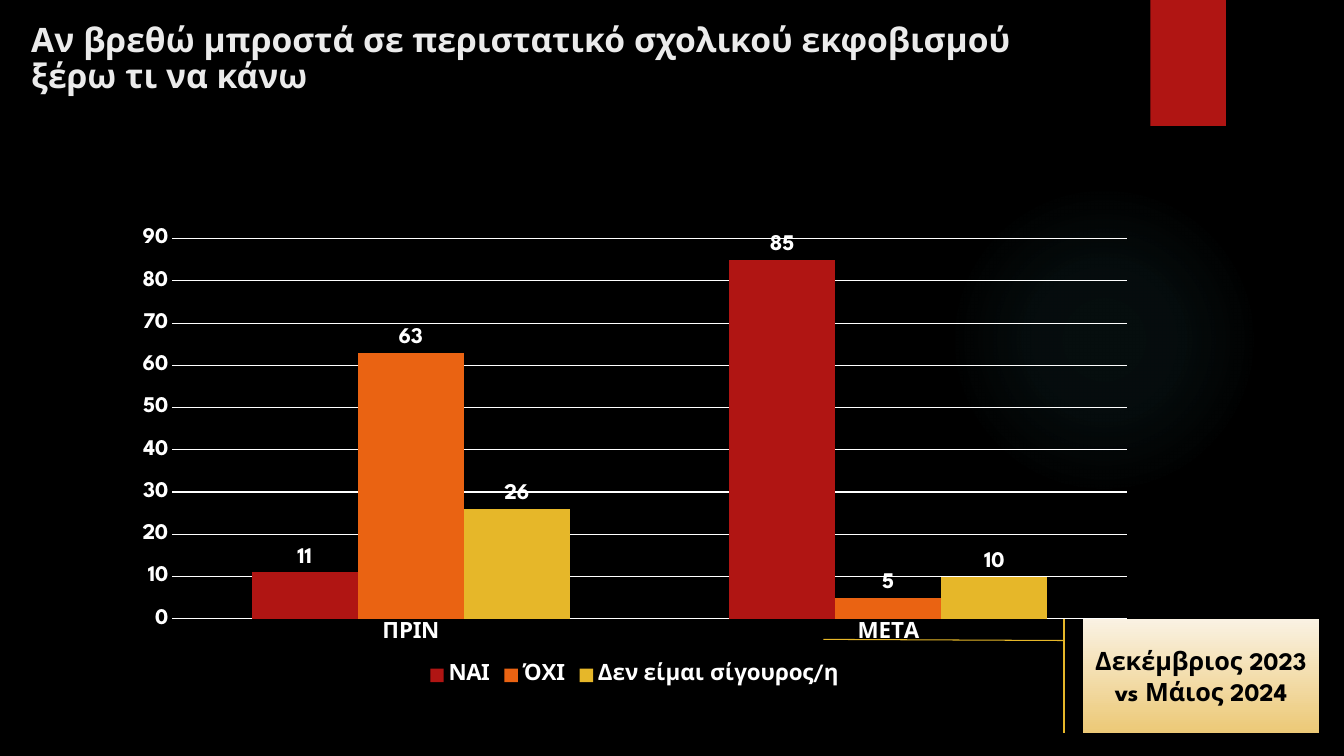
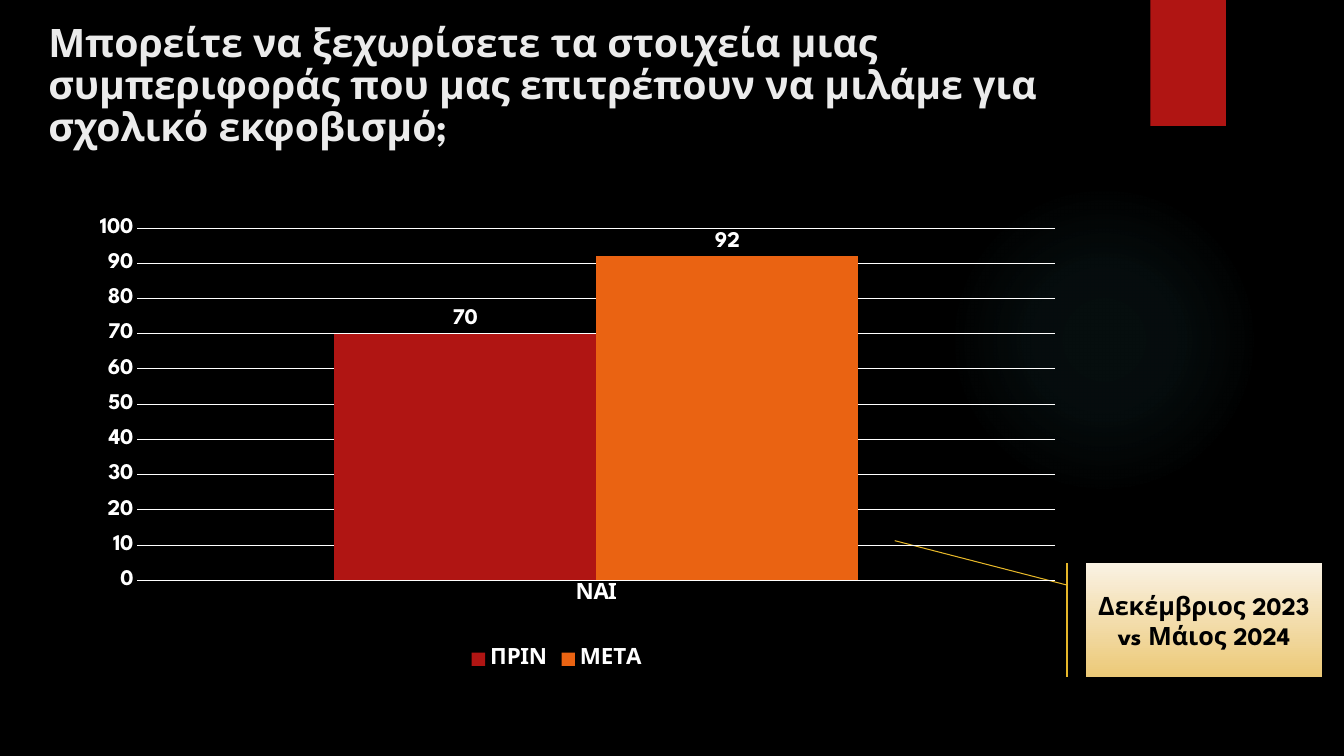
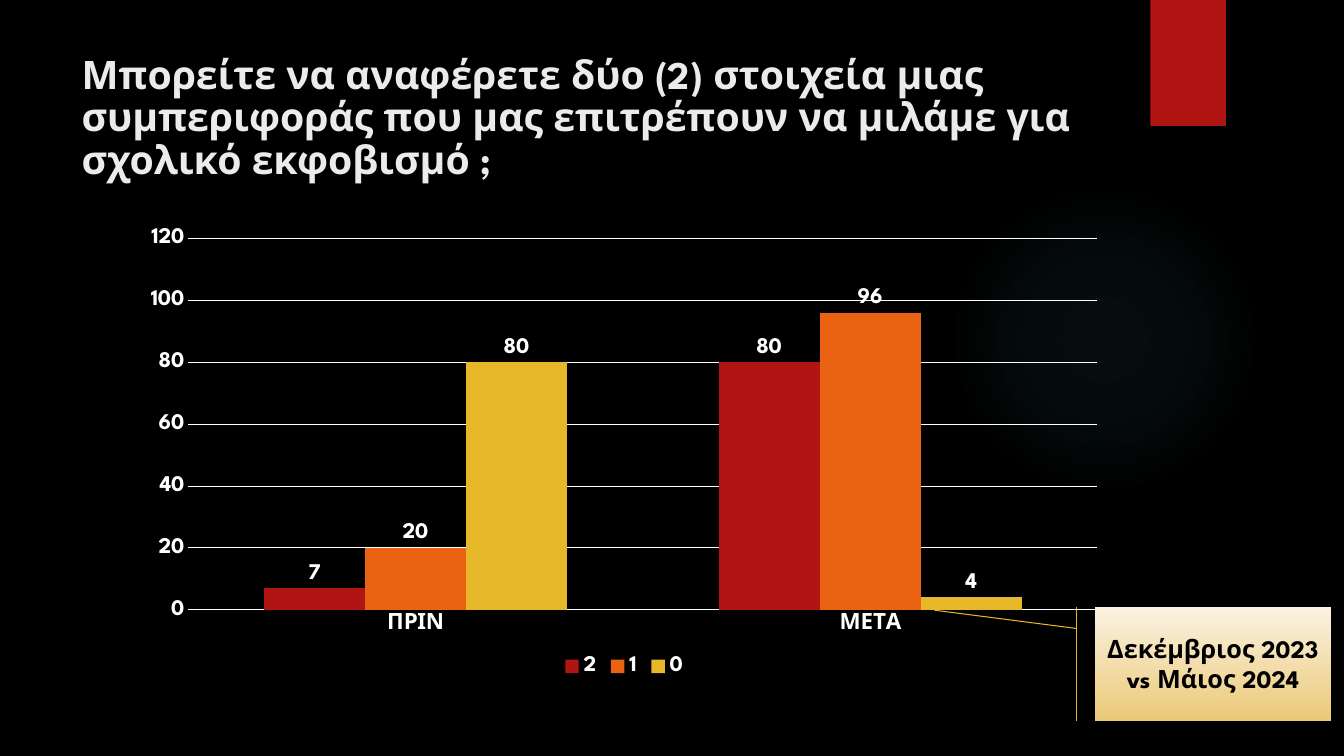
import dataclasses

import pptx
import pptx.chart.data
import pptx.dml.color
import pptx.enum.chart
import pptx.enum.shapes
import pptx.enum.text
import pptx.oxml
import pptx.oxml.ns
import pptx.util

Inches = pptx.util.Inches
Pt = pptx.util.Pt


@dataclasses.dataclass(frozen=True)
class Theme:
    font: str = "League Spartan"
    background: str = "000000"
    title: str = "EBEBEB"
    chart_text: str = "FFFFFF"
    callout_text: str = "000000"
    callout_top: str = "FAF2E3"
    callout_bottom: str = "ECC977"
    glow: str = "50B9C1"
    red: str = "B01513"
    orange: str = "EA6312"
    gold: str = "E6B729"
    chart_size: int = 16
    callout_size: int = 18
    title_size: int = 28
    long_title_size: int = 24
    hairline: float = 0.75

    @property
    def series(self):
        return self.red, self.orange, self.gold


THEME = Theme()
TITLE_SIZE = (10.29, 1.53)
CALLOUT_SIZE = (2.34, 1.13)
PERIOD = "Δεκέμβριος 2023 vs Μάιος 2024"


def rgb(value):
    return pptx.dml.color.RGBColor.from_string(value)


def place(box):
    return [Inches(length) for length in box]


def format_font(font, size, color):
    font.name = THEME.font
    font.size = Pt(size)
    font.bold = True
    font.color.rgb = rgb(color)


def write_text(shape, text, *, size, color, align, anchor, spacing=1.0):
    frame = shape.text_frame
    frame.word_wrap = True
    frame.auto_size = pptx.enum.text.MSO_AUTO_SIZE.NONE
    frame.vertical_anchor = anchor
    para = frame.paragraphs[0]
    para.alignment = align
    para.line_spacing = spacing
    span = para.add_run()
    span.text = text
    format_font(span.font, size, color)


def add_glow(page, box):
    glow = page.shapes.add_shape(pptx.enum.shapes.MSO_SHAPE.OVAL, *place(box))
    glow.shadow.inherit = False
    glow.line.fill.background()
    stops = "".join(
        f'<a:gs pos="{position * 1000}"><a:srgbClr val="{THEME.glow}">'
        f'<a:alpha val="{alpha * 1000}"/></a:srgbClr></a:gs>'
        for position, alpha in ((0, 7), (36, 6), (69, 0))
    )
    gradient = pptx.oxml.parse_xml(
        f'<a:gradFill {pptx.oxml.ns.nsdecls("a")}><a:gsLst>{stops}</a:gsLst>'
        '<a:path path="circle"><a:fillToRect l="50000" t="50000" r="50000" b="50000"/>'
        "</a:path></a:gradFill>"
    )
    properties = glow.element.spPr
    properties.find(pptx.oxml.ns.qn("a:prstGeom")).addnext(gradient)
    return glow


def add_ribbon(page, box):
    ribbon = page.shapes.add_shape(pptx.enum.shapes.MSO_SHAPE.RECTANGLE, *place(box))
    ribbon.shadow.inherit = False
    ribbon.fill.solid()
    ribbon.fill.fore_color.rgb = rgb(THEME.red)
    ribbon.line.fill.background()
    return ribbon


def decorate_layout(layout, page):
    background = layout.background.fill
    background.solid()
    background.fore_color.rgb = rgb(THEME.background)
    decorations = (
        add_glow(page, (9.41, 1.83, 3.08, 3.08)),
        add_ribbon(page, (11.41, 0, 0.75, 1.25)),
    )
    tree = layout.element.cSld.spTree
    for index, shape in enumerate(decorations, 2):
        tree.insert(index, shape.element)


def add_title(page, corner, text, size):
    title = page.shapes.title
    title.left, title.top, title.width, title.height = place(corner + TITLE_SIZE)
    write_text(
        title,
        text,
        size=size,
        color=THEME.title,
        align=pptx.enum.text.PP_ALIGN.LEFT,
        anchor=pptx.enum.text.MSO_ANCHOR.TOP,
        spacing=0.9,
    )


def add_callout(page, corner, pointer):
    callout = page.shapes.add_shape(
        pptx.enum.shapes.MSO_SHAPE.LINE_CALLOUT_1_ACCENT_BAR, *place(corner + CALLOUT_SIZE)
    )
    callout.shadow.inherit = False
    for index, value in enumerate((0.19, -0.08) + pointer):
        callout.adjustments[index] = value
    callout.fill.gradient()
    callout.fill.gradient_angle = 270
    colors = (THEME.callout_top, THEME.callout_bottom)
    for position, (stop, color) in enumerate(zip(callout.fill.gradient_stops, colors)):
        stop.position = position
        stop.color.rgb = rgb(color)
    callout.line.color.rgb = rgb(THEME.gold)
    callout.line.width = Pt(THEME.hairline)
    write_text(
        callout,
        PERIOD,
        size=THEME.callout_size,
        color=THEME.callout_text,
        align=pptx.enum.text.PP_ALIGN.CENTER,
        anchor=pptx.enum.text.MSO_ANCHOR.MIDDLE,
    )


def set_plot_area(chart, area):
    plot_area = chart.element.chart.plotArea
    for old in plot_area.findall(pptx.oxml.ns.qn("c:layout")):
        plot_area.remove(old)
    lengths = "".join(f'<c:{key} val="{value}"/>' for key, value in zip("xywh", area))
    plot_area.insert(
        0,
        pptx.oxml.parse_xml(
            f'<c:layout {pptx.oxml.ns.nsdecls("c")}><c:manualLayout>'
            '<c:layoutTarget val="inner"/><c:xMode val="edge"/><c:yMode val="edge"/>'
            f"{lengths}</c:manualLayout></c:layout>"
        ),
    )


def add_column_chart(page, box, categories, series, area=None):
    data = pptx.chart.data.CategoryChartData()
    data.categories = categories
    for name, values in series.items():
        data.add_series(name, values)
    kind = pptx.enum.chart.XL_CHART_TYPE.COLUMN_CLUSTERED
    chart = page.shapes.add_chart(kind, *place(box), data).chart
    chart.has_title = False
    format_font(chart.font, THEME.chart_size, THEME.chart_text)

    chart.has_legend = True
    chart.legend.position = pptx.enum.chart.XL_LEGEND_POSITION.BOTTOM
    chart.legend.include_in_layout = False

    for axis in (chart.category_axis, chart.value_axis):
        axis.major_tick_mark = pptx.enum.chart.XL_TICK_MARK.NONE
        axis.minor_tick_mark = pptx.enum.chart.XL_TICK_MARK.NONE
        axis.format.line.fill.background()
    grid = chart.value_axis.major_gridlines.format.line
    grid.color.rgb = rgb(THEME.chart_text)
    grid.width = Pt(THEME.hairline)

    plot = chart.plots[0]
    plot.gap_width = 150
    plot.overlap = 0
    plot.vary_by_categories = False
    plot.has_data_labels = True
    labels = plot.data_labels
    labels.show_value = True
    labels.position = pptx.enum.chart.XL_LABEL_POSITION.OUTSIDE_END
    format_font(labels.font, THEME.chart_size, THEME.chart_text)
    for column, color in zip(plot.series, THEME.series):
        column.format.fill.solid()
        column.format.fill.fore_color.rgb = rgb(color)
    if area:
        set_plot_area(chart, area)


def build_knowledge_page(page):
    add_title(
        page,
        (0.21, 0.18),
        "Αν βρεθώ μπροστά σε περιστατικό σχολικού εκφοβισμού ξέρω τι να κάνω",
        THEME.long_title_size,
    )
    add_column_chart(
        page,
        (1.21, 2.17, 10.17, 4.68),
        ("ΠΡΙΝ", "ΜΕΤΑ"),
        {"ΝΑΙ": (11, 85), "ΌΧΙ": (63, 5), "Δεν είμαι σίγουρος/η": (26, 10)},
    )
    add_callout(page, (10.74, 6.14), (0.18, -1.1))


def build_recognition_page(page):
    add_title(
        page,
        (0.38, 0.18),
        "Μπορείτε να ξεχωρίσετε τα στοιχεία μιας συμπεριφοράς που μας επιτρέπουν "
        "να μιλάμε για σχολικό εκφοβισμό;",
        THEME.title_size,
    )
    add_callout(page, (10.77, 5.59), (-0.2, -0.81))
    add_column_chart(
        page,
        (0.57, 2.03, 9.9, 4.66),
        ("ΝΑΙ",),
        {"ΠΡΙΝ": (70,), "ΜΕΤΑ": (92,)},
        area=(0.08, 0.05, 0.92, 0.75),
    )


def build_elements_page(page):
    add_title(
        page,
        (0.71, 0.5),
        "Μπορείτε να αναφέρετε δύο (2) στοιχεία μιας συμπεριφοράς που μας επιτρέπουν "
        "να μιλάμε για σχολικό εκφοβισμό ;",
        THEME.title_size,
    )
    add_callout(page, (10.86, 6.02), (0.03, -0.68))
    add_column_chart(
        page,
        (1.3, 2.17, 9.78, 4.59),
        ("ΠΡΙΝ", "ΜΕΤΑ"),
        {"2": (7, 80), "1": (20, 96), "0": (80, 4)},
    )


def main():
    deck = pptx.Presentation()
    deck.slide_width = Inches(13.33)
    deck.slide_height = Inches(7.5)
    layout = deck.slide_layouts.get_by_name("Title Only")
    builders = (build_knowledge_page, build_recognition_page, build_elements_page)
    pages = [deck.slides.add_slide(layout) for _ in builders]
    decorate_layout(layout, pages[0])
    for build, page in zip(builders, pages):
        build(page)
    deck.save("out.pptx")


if __name__ == "__main__":
    main()
